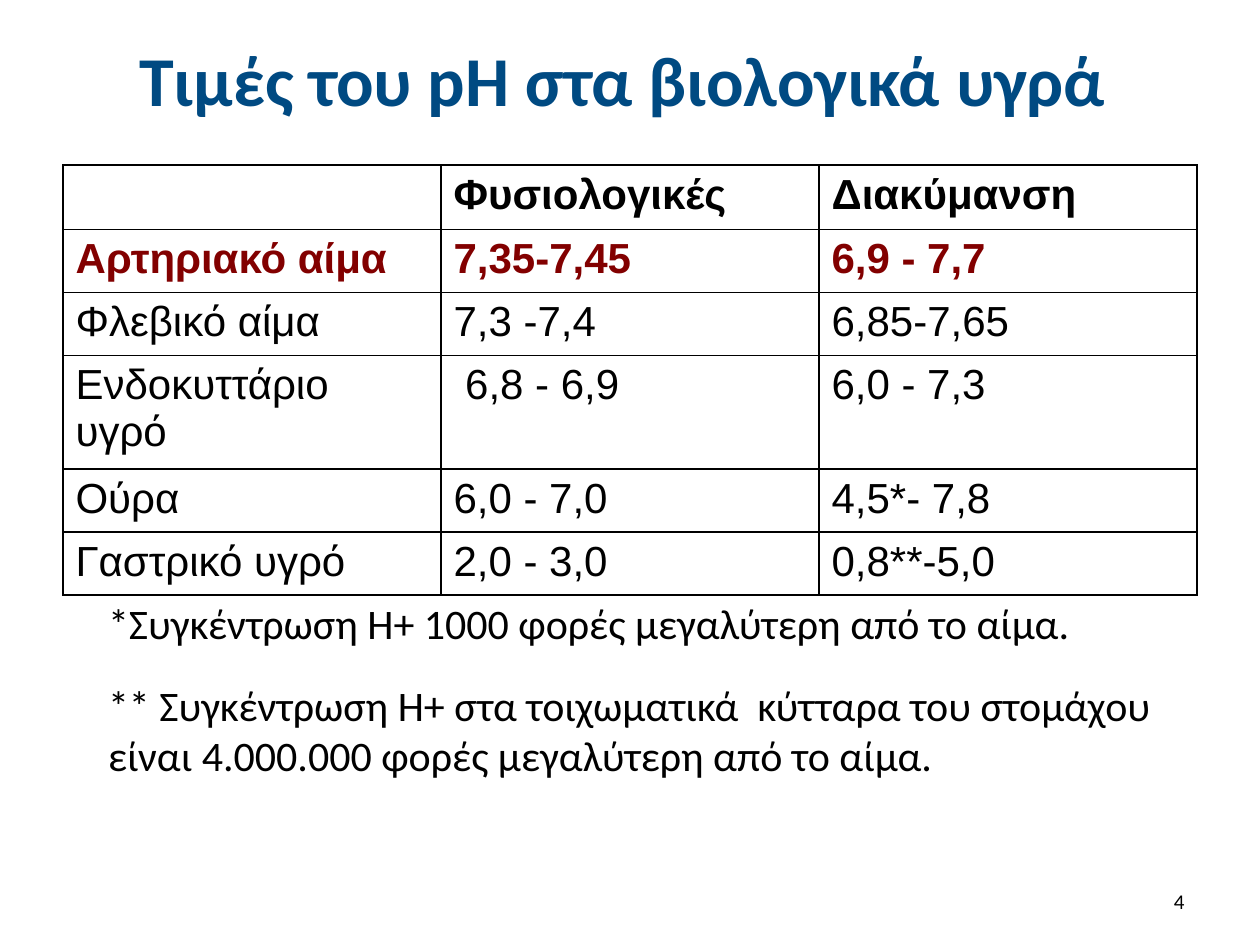
import pptx
import pptx.dml.color
import pptx.enum.text
import pptx.util
from lxml import etree
from pptx.oxml.ns import qn

COLORS = {"title": "004A82", "text": "000000", "arterial": "820000", "cell": "FFFFFF"}
ALIGN = pptx.enum.text.PP_ALIGN
ANCHOR = pptx.enum.text.MSO_ANCHOR
SLIDE_WIDTH, SLIDE_HEIGHT = 10, 7.5
MARGIN = SLIDE_WIDTH * 0.05
CONTENT_WIDTH = SLIDE_WIDTH - 2 * MARGIN

HEADER_HEIGHT, LINE_ROW, WRAPPED_ROW = 0.51, 0.47, 0.84
ROW_HEIGHTS = [HEADER_HEIGHT, LINE_ROW, LINE_ROW, WRAPPED_ROW, LINE_ROW, LINE_ROW]
PH_VALUES = [
    ["", "Φυσιολογικές", "Διακύμανση"],
    ["Αρτηριακό αίμα", "7,35-7,45", "6,9 - 7,7"],
    ["Φλεβικό αίμα", "7,3 -7,4", "6,85-7,65"],
    ["Ενδοκυττάριο υγρό", " 6,8 - 6,9", "6,0 - 7,3"],
    ["Ούρα", "6,0 - 7,0", "4,5*- 7,8"],
    ["Γαστρικό υγρό", "2,0 - 3,0", "0,8**-5,0"],
]
FOOTNOTES = [
    "*Συγκέντρωση Η+ 1000 φορές μεγαλύτερη από το αίμα.",
    "** Συγκέντρωση Η+ στα τοιχωματικά  κύτταρα του στομάχου "
    "είναι 4.000.000 φορές μεγαλύτερη από το αίμα.",
]


def rgb(role):
    return pptx.dml.color.RGBColor.from_string(COLORS[role])


def style(paragraph, size, name="Calibri", role="text", bold=False):
    font = paragraph.font
    font.size = pptx.util.Pt(size)
    font.name = name
    font.bold = bold
    font.color.rgb = rgb(role)


def add_text(slide, box, lines, size, align=ALIGN.LEFT, anchor=ANCHOR.TOP,
             gap=0, role="text", bold=False):
    """Add one paragraph per line, with gap points between paragraphs."""
    frame = slide.shapes.add_textbox(*map(pptx.util.Inches, box)).text_frame
    frame.word_wrap = True
    frame.vertical_anchor = anchor
    for index, line in enumerate(lines):
        paragraph = frame.paragraphs[0] if index == 0 else frame.add_paragraph()
        paragraph.text = line
        paragraph.alignment = align
        if index:
            paragraph.space_before = pptx.util.Pt(gap)
        style(paragraph, size, role=role, bold=bold)


def add_borders(cell, width=1):
    properties = cell._tc.get_or_add_tcPr()
    for side in ("lnL", "lnR", "lnT", "lnB"):
        line = etree.SubElement(properties, qn(f"a:{side}"), w=str(pptx.util.Pt(width)))
        fill = etree.SubElement(line, qn("a:solidFill"))
        etree.SubElement(fill, qn("a:srgbClr"), val=COLORS["text"])


def add_ph_table(slide, left, top, width):
    frame = slide.shapes.add_table(
        len(PH_VALUES), len(PH_VALUES[0]),
        *map(pptx.util.Inches, (left, top, width, sum(ROW_HEIGHTS))))
    table = frame.table
    for row, height in zip(table.rows, ROW_HEIGHTS):
        row.height = pptx.util.Inches(height)
    for row_index, values in enumerate(PH_VALUES):
        role = "arterial" if row_index == 1 else "text"
        for column_index, value in enumerate(values):
            cell = table.cell(row_index, column_index)
            cell.text = value
            style(cell.text_frame.paragraphs[0], 24, "Arial", role, bold=row_index < 2)
            add_borders(cell)
            cell.fill.solid()
            cell.fill.fore_color.rgb = rgb("cell")


def main():
    deck = pptx.Presentation()
    deck.slide_width = pptx.util.Inches(SLIDE_WIDTH)
    deck.slide_height = pptx.util.Inches(SLIDE_HEIGHT)
    slide = deck.slides.add_slide(deck.slide_layouts[6])
    right = MARGIN + CONTENT_WIDTH
    notes_left, number_width = 0.76, 2.33

    add_text(slide, (MARGIN, 0.13, CONTENT_WIDTH, 0.99),
             ["Τιμές του pH στα βιολογικά υγρά "], 40,
             ALIGN.CENTER, ANCHOR.MIDDLE, role="title", bold=True)
    add_ph_table(slide, MARGIN, 1.31, CONTENT_WIDTH)
    add_text(slide, (right - number_width, 6.95, number_width, 0.4),
             ["4"], 12, ALIGN.RIGHT, ANCHOR.MIDDLE)
    add_text(slide, (notes_left, 4.69, right - notes_left, 1.57), FOOTNOTES, 24, gap=18)
    deck.save("out.pptx")


if __name__ == "__main__":
    main()
